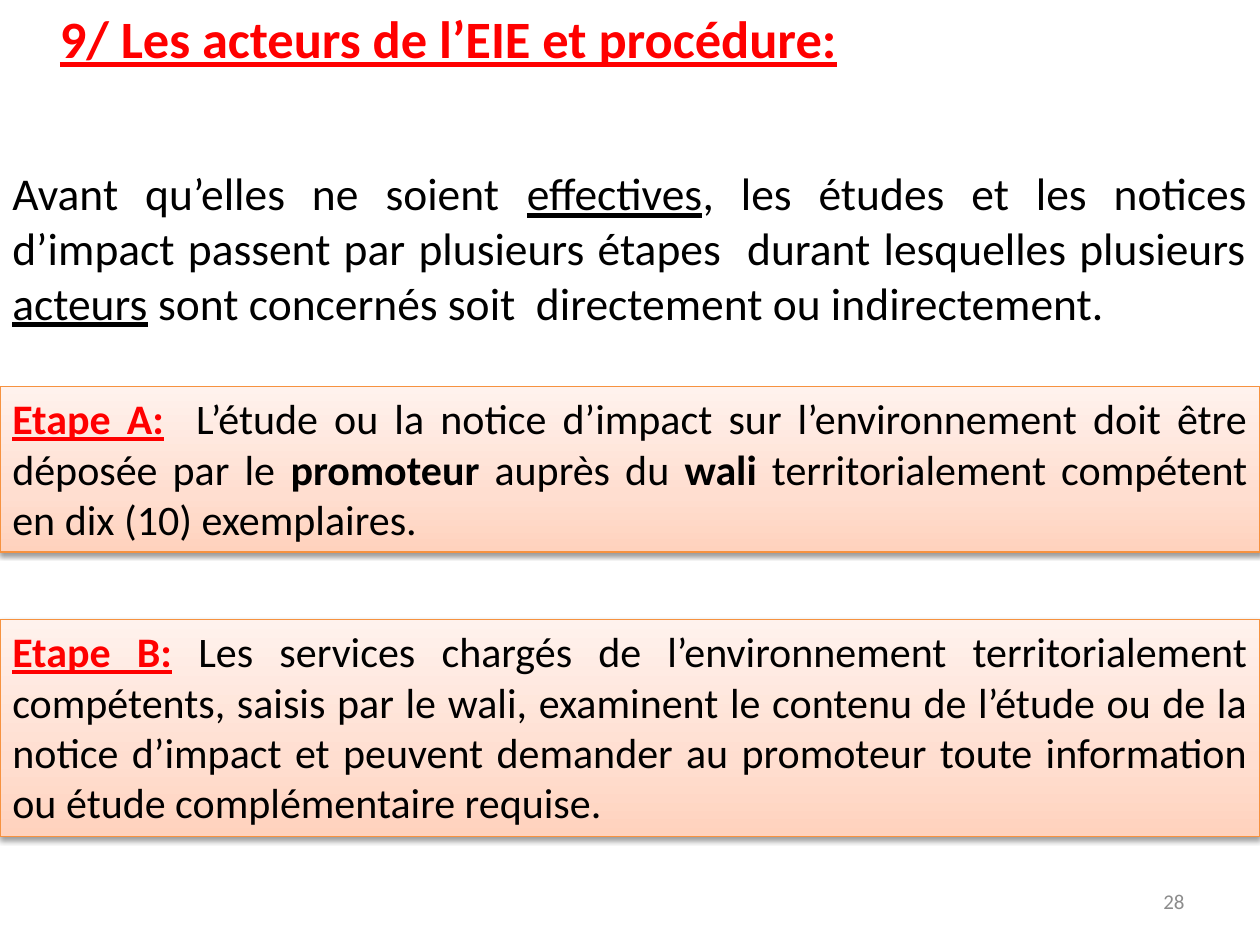
from copy import deepcopy
from lxml.etree import SubElement
from pptx import Presentation
from pptx.dml.color import RGBColor
from pptx.enum.shapes import MSO_SHAPE
from pptx.enum.text import MSO_ANCHOR as ANCHOR, MSO_AUTO_SIZE as AUTO, PP_ALIGN as ALIGN
from pptx.oxml.ns import qn
from pptx.util import Pt

COLORS = {"red": "FF0000", "black": "000000", "gray": "8C8C8C", "edge": "F69240"}
GRADIENT = [(0, "FFD2BD"), (0.35, "FFDED0"), (1, "FFF2ED")]
STYLES = {
    "plain": ("black", {}),
    "bold": ("black", {"bold": True}),
    "under": ("black", {"underline": True}),
    "head": ("red", {"bold": True, "underline": True}),
    "number": ("gray", {}),
}
SLIDE_W, SLIDE_H = 720, 540

TITLE = [("9/ Les acteurs de l’EIE et procédure:", "head")]
INTRO = [
    ("Avant qu’elles ne soient ", "plain"),
    ("effectives", "under"),
    (", les études et les notices d’impact passent par plusieurs étapes  durant "
     "lesquelles plusieurs ", "plain"),
    ("acteurs", "under"),
    (" sont concernés soit  directement ou indirectement.", "plain"),
]
NUMBER = [("28", "number")]
STEPS = [
    (221, 94.5, [
        ("Etape A:", "head"),
        ("  L’étude ou la notice d’impact sur l’environnement doit être déposée par le ", "plain"),
        ("promoteur", "bold"),
        (" auprès du ", "plain"),
        ("wali", "bold"),
        (" territorialement compétent en dix (10) exemplaires.", "plain"),
    ]),
    (354, 124, [
        ("Etape B:", "head"),
        (" Les services chargés de l’environnement territorialement compétents, saisis par "
         "le wali, examinent le contenu de l’étude ou de la notice d’impact et peuvent "
         "demander au promoteur toute information ou étude complémentaire requise.", "plain"),
    ]),
]


def write(s, runs, size, align=ALIGN.JUSTIFY, anchor=ANCHOR.TOP):
    tf = s.text_frame
    frame = {"word_wrap": True, "auto_size": AUTO.NONE, "vertical_anchor": anchor}
    for name, value in frame.items():
        setattr(tf, name, value)
    p = tf.paragraphs[0]
    p.alignment = align
    for text, style in runs:
        color, extra = STYLES[style]
        r = p.add_run()
        r.text = text
        font = {"name": "Calibri", "size": Pt(size), "bold": False, "underline": False, **extra}
        for name, value in font.items():
            setattr(r.font, name, value)
        r.font.color.rgb = RGBColor.from_string(COLORS[color])


def add_text(slide, box, *args, **kwargs):
    write(slide.shapes.add_textbox(*map(Pt, box)), *args, **kwargs)


def add_gradient(s):
    s.fill.gradient()
    s.fill.gradient_angle = 90
    stops = s.fill.gradient_stops
    first = s.element.spPr.find(".//" + qn("a:gs"))
    first.addnext(deepcopy(first))
    stops = s.fill.gradient_stops
    for stop, (position, color) in zip(stops, GRADIENT):
        stop.position = position
        stop.color.rgb = RGBColor.from_string(color)


def add_shadow(s):
    s.shadow.inherit = False
    effects = s.element.spPr.find(qn("a:effectLst"))
    shadow = SubElement(effects, qn("a:outerShdw"), blurRad=str(Pt(3.1)), dist=str(Pt(1.6)),
                        dir="5400000", rotWithShape="0")
    color = SubElement(shadow, qn("a:srgbClr"), val=COLORS["black"])
    SubElement(color, qn("a:alpha"), val="38000")


def add_step(slide, top, height, runs):
    s = slide.shapes.add_shape(MSO_SHAPE.RECTANGLE, 0, Pt(top), Pt(SLIDE_W), Pt(height))
    add_gradient(s)
    s.line.color.rgb = RGBColor.from_string(COLORS["edge"])
    s.line.width = Pt(0.75)
    add_shadow(s)
    write(s, runs, 24)


def main():
    prs = Presentation()
    prs.slide_width, prs.slide_height = Pt(SLIDE_W), Pt(SLIDE_H)
    slide = prs.slides.add_slide(prs.slide_layouts[5])
    title = slide.shapes.title
    title.left, title.top, title.width, title.height = map(Pt, (27, 0, SLIDE_W - 27, 44))
    write(title, TITLE, 30, ALIGN.LEFT)
    add_text(slide, (0, 91, SLIDE_W, 95), INTRO, 26)
    add_text(slide, (516, 500.5, 168, 28.75), NUMBER, 12, ALIGN.RIGHT, ANCHOR.MIDDLE)
    for step in STEPS:
        add_step(slide, *step)
    prs.save("out.pptx")


if __name__ == "__main__":
    main()
